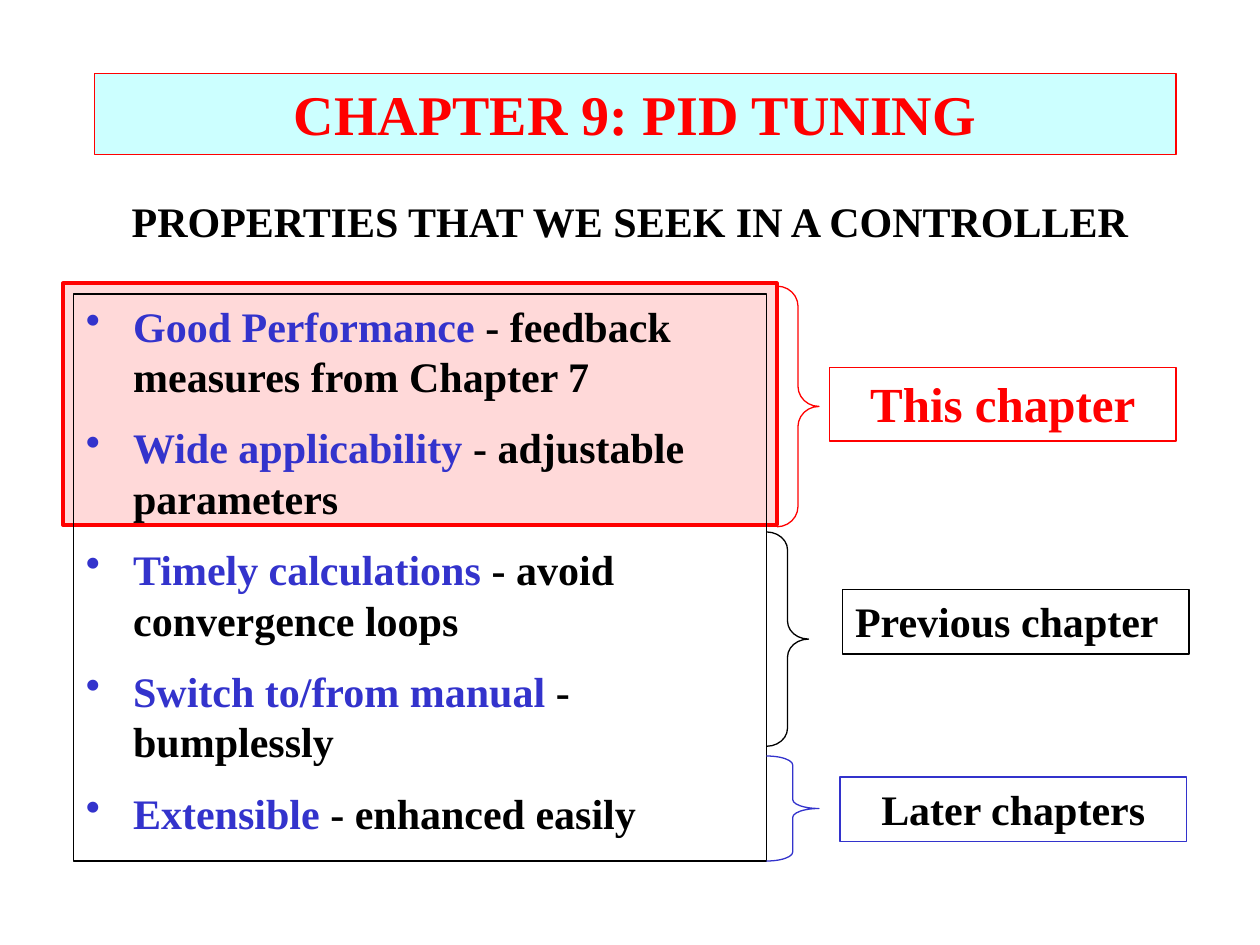
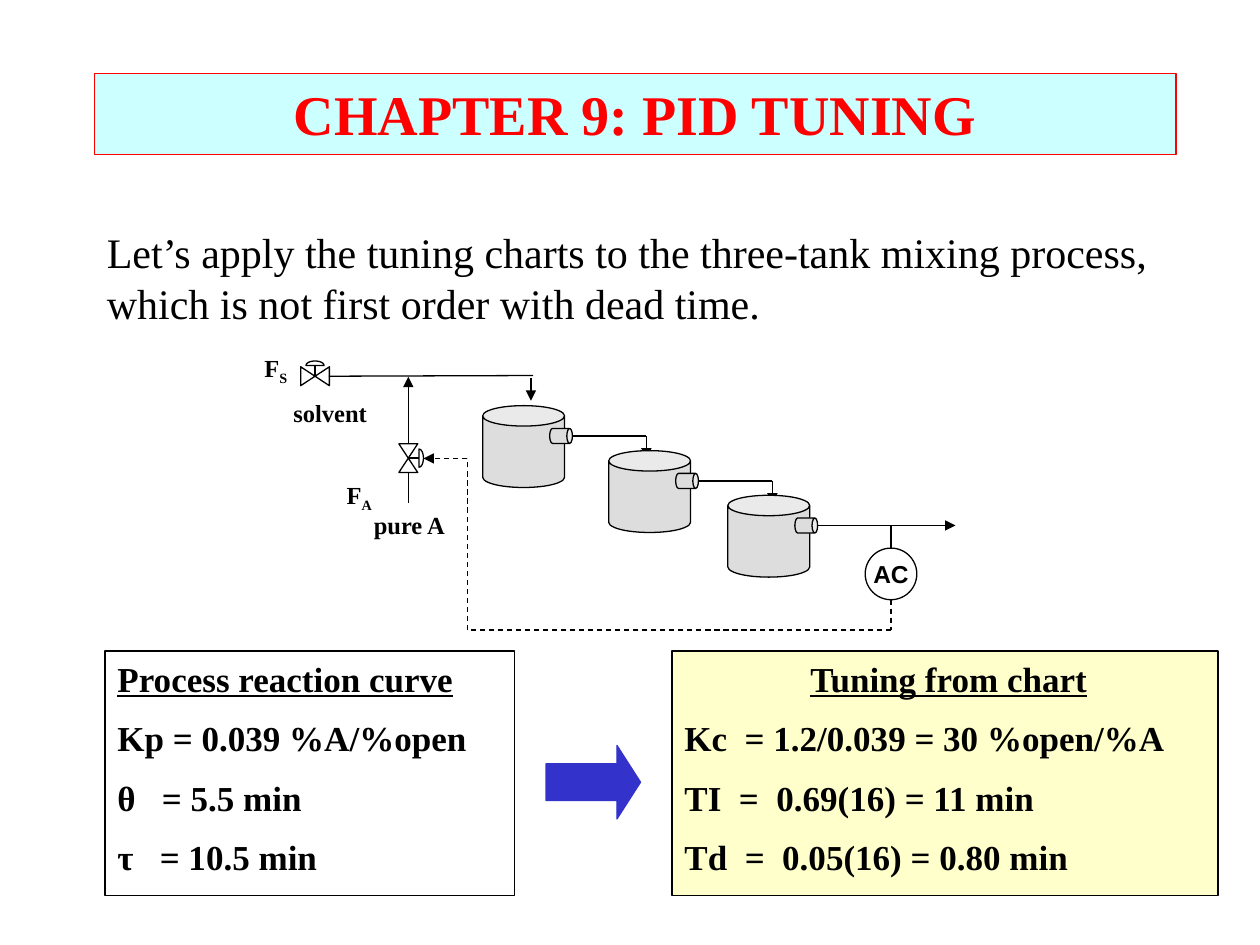
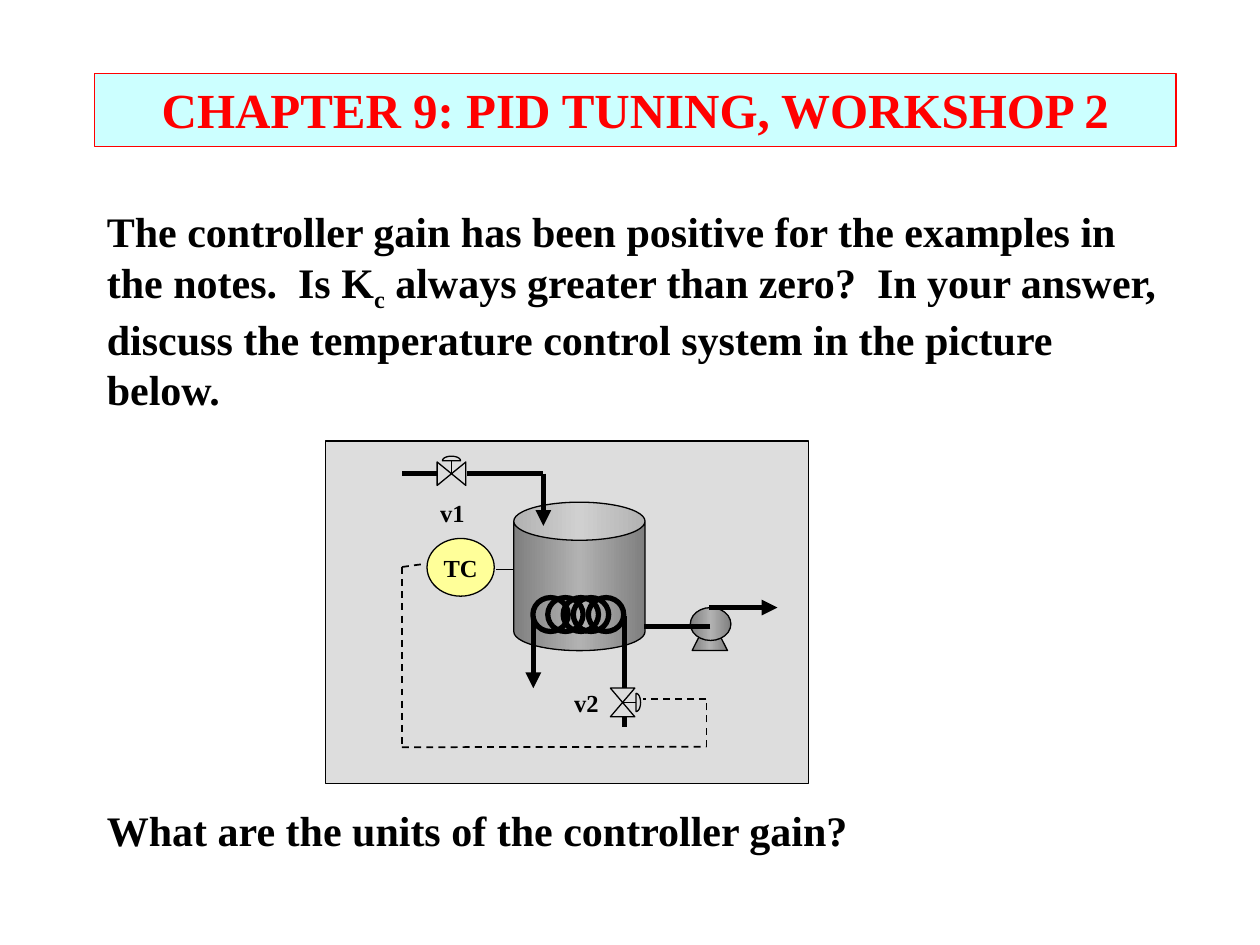
from copy import deepcopy
from math import cos, pi, sin

from pptx import Presentation
from pptx.dml.color import RGBColor
from pptx.enum.dml import MSO_LINE
from pptx.enum.shapes import MSO_CONNECTOR, MSO_SHAPE
from pptx.enum.text import MSO_ANCHOR, PP_ALIGN
from pptx.oxml.ns import qn
from pptx.util import Pt
from lxml.etree import SubElement

BLACK = RGBColor(0, 0, 0)
RED = RGBColor(0xFF, 0, 0)
BLUE = RGBColor(0x33, 0x33, 0xCC)
CYAN = RGBColor(0xCC, 0xFF, 0xFF)
PINK = RGBColor(0xFF, 0xD9, 0xD9)
CREAM = RGBColor(0xFF, 0xFF, 0xCC)
YELLOW = RGBColor(0xFF, 0xFF, 0x99)
GREY = RGBColor(0xDD, 0xDD, 0xDD)
DARK = RGBColor(0x7F, 0x7F, 0x7F)
LIGHT = RGBColor(0xB2, 0xB2, 0xB2)
METAL = [DARK, LIGHT, DARK]
SERIF = "Times New Roman"
SANS = "Arial"
MID = PP_ALIGN.CENTER

TITLE = "CHAPTER 9: PID TUNING"
GOALS = [
    ("Good Performance", " - feedback measures from Chapter 7"),
    ("Wide applicability", " - adjustable parameters"),
    ("Timely calculations", " - avoid convergence loops"),
    ("Switch to/from manual", " - bumplessly"),
    ("Extensible ", "- enhanced easily"),
]
BRACES = [
    ((444, 163.5, 24, 137.5), 0.48, RED),
    ((438, 432, 30, 60), 0.17, BLUE),
    ((438, 304, 24, 122.5), 0.43, BLACK),
]
SCOPES = [
    ("This chapter", (474, 210, 198, 42), 28, RED, RED, MID),
    ("Previous chapter", (481.5, 337, 198, 36.7), 24, BLACK, BLACK, None),
    ("Later chapters", (480, 444, 198, 36.7), 24, BLUE, BLACK, MID),
]
INTRO = ("Let’s apply the tuning charts to the three-tank mixing process, "
         "which is not first order with dead time.")
TANKS = [(275.8, 231.8), (347.8, 257.5), (415.9, 283)]
FEEDS = [
    ([("F", ""), ("S", "sub")], (144, 198, 38, 24)),
    ("solvent", (160.5, 224, 70, 24)),
    ([("F", ""), ("A", "sub")], (191, 270.5, 38, 24)),
    ("pure A", (206.5, 288, 70, 24)),
]
CURVE = [
    [("Process reaction curve", "under")],
    "Kp = 0.039 %A/%open",
    "θ   = 5.5 min",
    "τ   = 10.5 min",
]
CHART = [
    [("Tuning from chart", "under")],
    "Kc  = 1.2/0.039 = 30 %open/%A",
    "TI  =  0.69(16) = 11 min",
    "Td  =  0.05(16) = 0.80 min",
]
TASK = [
    ("The controller gain has been positive for the examples in the notes.  Is K", ""),
    ("c", "sub"),
    (" always greater than zero?  In your answer, discuss the temperature "
     "control system in the picture below.", ""),
]
UNITS = "What are the units of the controller gain?"
COILS = [304.5, 313, 321.8, 327.6, 336.2]

deck = Presentation()
deck.slide_width, deck.slide_height = Pt(720), Pt(540)


def paint(form, fill=None, line=BLACK, width=0.75):
    form.shadow.inherit = False
    if isinstance(fill, list):
        form.fill.gradient()
        stops = form._element.spPr.find(".//" + qn("a:gsLst"))
        stops.append(deepcopy(stops[0]))
        for step, (stop, hue) in enumerate(zip(form.fill.gradient_stops, fill)):
            stop.position = step / 2
            stop.color.rgb = hue
        form.fill.gradient_angle = 0
    elif fill is None:
        form.fill.background()
    else:
        form.fill.solid()
        form.fill.fore_color.rgb = fill
    form.line.color.rgb = line
    form.line.width = Pt(width)
    return form


def shape(page, kind, box, fill=None, line=BLACK, width=0.75, adj=()):
    form = page.shapes.add_shape(kind, *map(Pt, box))
    for num, value in enumerate(adj):
        form.adjustments[num] = value
    return paint(form, fill, line, width)


def rect(page, box, *style):
    return shape(page, MSO_SHAPE.RECTANGLE, box, *style)


def write(form, paras, size, hue=BLACK, align=None, bold=True, face=SERIF,
          bullet=False):
    frame = form.text_frame
    frame.word_wrap = True
    frame.vertical_anchor = MSO_ANCHOR.TOP
    for num, runs in enumerate(paras):
        para = frame.add_paragraph() if num else frame.paragraphs[0]
        para.alignment = align or PP_ALIGN.LEFT
        para.space_before = Pt(size / 2 if num else 0)
        if bullet:
            props = para._p.get_or_add_pPr()
            props.set("marL", str(Pt(27)))
            props.set("indent", str(-Pt(27)))
            SubElement(props, qn("a:buChar")).set("char", "•")
        font = para.font
        font.name, font.size, font.bold = face, Pt(size), bold
        font.color.rgb = hue
        for text, mark in [(runs, "")] if isinstance(runs, str) else runs:
            run = para.add_run()
            run.text = text
            if mark == "sub":
                run._r.get_or_add_rPr().set("baseline", "-25000")
            elif mark == "under":
                run.font.underline = True
            elif mark:
                run.font.color.rgb = mark
    return frame


def label(page, runs, box, size, **style):
    write(page.shapes.add_textbox(*map(Pt, box)), [runs], size, **style)


def line(page, x1, y1, x2, y2, width=0.75, dash=False, head=False):
    wire = page.shapes.add_connector(MSO_CONNECTOR.STRAIGHT,
                                     *map(Pt, (x1, y1, x2, y2)))
    SubElement(wire._element.spPr, qn("a:effectLst"))
    wire.line.color.rgb = BLACK
    wire.line.width = Pt(width)
    if dash:
        wire.line.dash_style = MSO_LINE.DASH
    if head:
        edge = wire._element.spPr.find(qn("a:ln"))
        SubElement(edge, qn("a:tailEnd")).set("type", "triangle")


def route(page, spots, head=False, **style):
    last = len(spots) - 2
    for num, (start, end) in enumerate(zip(spots, spots[1:])):
        line(page, *start, *end, head=head and num == last, **style)


def outline(page, spots):
    spots = [(Pt(x), Pt(y)) for x, y in spots]
    pen = page.shapes.build_freeform(*spots[0], scale=1.0)
    pen.add_line_segments(spots[1:], close=True)
    paint(pen.convert_to_shape())


def valve(page, x, y, half, turn=False):
    def spot(along, out):
        return (x + out, y + along) if turn else (x + along, y - out)

    stem = half + 0.7
    outline(page, [spot(-8.2, -half), spot(-8.2, half), spot(8.2, -half), spot(8.2, half)])
    line(page, *spot(0, 0), *spot(0, stem))
    arc = [pi * step / 12 for step in range(13)]
    outline(page, [spot(5.2 * cos(a), stem + 2.6 * sin(a)) for a in arc])


def meter(page, text, box, fill=None, face=SERIF):
    form = shape(page, MSO_SHAPE.OVAL, box, fill)
    frame = write(form, [text], 14, align=MID, face=face)
    frame.vertical_anchor = MSO_ANCHOR.MIDDLE
    frame.word_wrap = False
    frame.margin_left = frame.margin_right = 0
    frame.margin_top = frame.margin_bottom = 0


def start(title=TITLE, size=32, high=46.3):
    page = deck.slides.add_slide(deck.slide_layouts[6])
    band = rect(page, (54, 42, 618, high), CYAN, RED)
    write(band, [title], size, RED, MID)
    return page


def goals():
    page = start()
    rect(page, (36, 162, 408, 138), PINK, RED, 2.25)
    label(page, "PROPERTIES THAT WE SEEK IN A CONTROLLER",
          (60, 108, 600, 36), 24, align=MID)
    items = [[(name, BLUE), (note, BLACK)] for name, note in GOALS]
    write(rect(page, (42, 168, 396, 324)), items, 24, BLUE, bullet=True)
    for box, bend, hue in BRACES:
        shape(page, MSO_SHAPE.RIGHT_BRACE, box, None, hue, adj=(bend, 0.5))
    for text, box, size, edge, hue, align in SCOPES:
        write(rect(page, box, None, edge), [text], size, hue, align)


def mixing():
    page = start()
    label(page, INTRO, (54, 126, 618, 65), 24, bold=False)
    for num, (x, y) in enumerate(TANKS):
        shape(page, MSO_SHAPE.CAN, (x, y, 46.8, 46.8), GREY, adj=(0.25,))
        spout = shape(page, MSO_SHAPE.CAN, (x + 40.5, y + 10.8, 8.6, 13),
                      GREY, adj=(0.375,))
        spout.rotation = 90
        out = y + 17.3
        if num < 2:
            spots = [(x + 51, out), (x + 93.6, out), (x + 93.6, out + 13)]
        else:
            spots = [(x + 51, out), (546, out)]
        route(page, spots, head=True)
    line(page, 188, 215, 304.6, 214.6)
    line(page, 303.4, 216, 303.4, 229, head=True)
    line(page, 233.3, 253.5, 233.3, 215.3, head=True)
    line(page, 233.3, 270.5, 233.3, 287.3)
    valve(page, 180, 215, 5.4)
    valve(page, 233.3, 261.8, 5.4, True)
    for runs, box in FEEDS:
        label(page, runs, box, 14)
    meter(page, "AC", (494.4, 313.2, 29.5, 29.5), face=SANS)
    line(page, 509.2, 313.2, 509.2, 300.2)
    route(page, [(509.2, 342.7), (509.2, 360), (267.1, 360),
                 (267.1, 262), (242, 262)], dash=True, head=True)
    frame = write(rect(page, (384, 372, 312, 139.7), CREAM), CHART, 20)
    frame.paragraphs[0]._p.get_or_add_pPr().set("marL", str(Pt(72)))
    shape(page, MSO_SHAPE.RIGHT_ARROW, (312, 426, 54, 42), BLUE, BLUE,
          adj=(0.5, 0.32))
    write(rect(page, (60, 372, 234, 139.7)), CURVE, 20)


def workshop():
    page = start(TITLE + ", WORKSHOP 2", 28, 41.8)
    rect(page, (186, 252, 276, 195.8), GREY)
    shape(page, MSO_SHAPE.CAN, (293.6, 287, 75, 84.8), METAL, adj=(0.29,))
    foot = shape(page, MSO_SHAPE.FLOWCHART_MANUAL_OPERATION,
                 (395.5, 363.8, 20.2, 8), METAL)
    foot._element.spPr.find(qn("a:xfrm")).set("flipV", "1")
    for x in COILS:
        shape(page, MSO_SHAPE.FLOWCHART_CONNECTOR, (x, 341.5, 20.2, 19.4), width=3)
    line(page, 304.8, 352, 304.8, 393.3, 3, head=True)
    line(page, 357, 352, 357, 393.3, 3)
    line(page, 357, 409.7, 357, 415.3, 3)
    valve(page, 355.8, 401.4, 7, True)
    valve(page, 258, 270.7, 6.7)
    shape(page, MSO_SHAPE.OVAL, (394.5, 347.2, 23.2, 18.8), METAL)
    line(page, 406, 357.8, 368, 357.8, 3)
    line(page, 405.3, 347.2, 444.3, 347.2, 3, head=True)
    line(page, 249.7, 270.7, 229.7, 270.7, 3)
    route(page, [(267, 270.7), (310.5, 270.7), (310.5, 300.5)], width=3, head=True)
    meter(page, "TC", (244, 307.7, 38.4, 33), YELLOW)
    line(page, 283.5, 325.5, 293, 325.5)
    label(page, "v1", (244.5, 281, 36, 24), 14)
    label(page, "v2", (321, 389.5, 36, 24), 14)
    route(page, [(240.5, 322.5), (229.7, 324), (229.7, 427), (403.7, 426.7),
                 (403.7, 399.3), (367.2, 399.3)], width=1, dash=True)
    label(page, TASK, (54, 114, 618, 122), 24)
    label(page, UNITS, (54, 456, 594, 36), 24)


def main():
    goals()
    mixing()
    workshop()
    deck.save("out.pptx")


if __name__ == "__main__":
    main()
